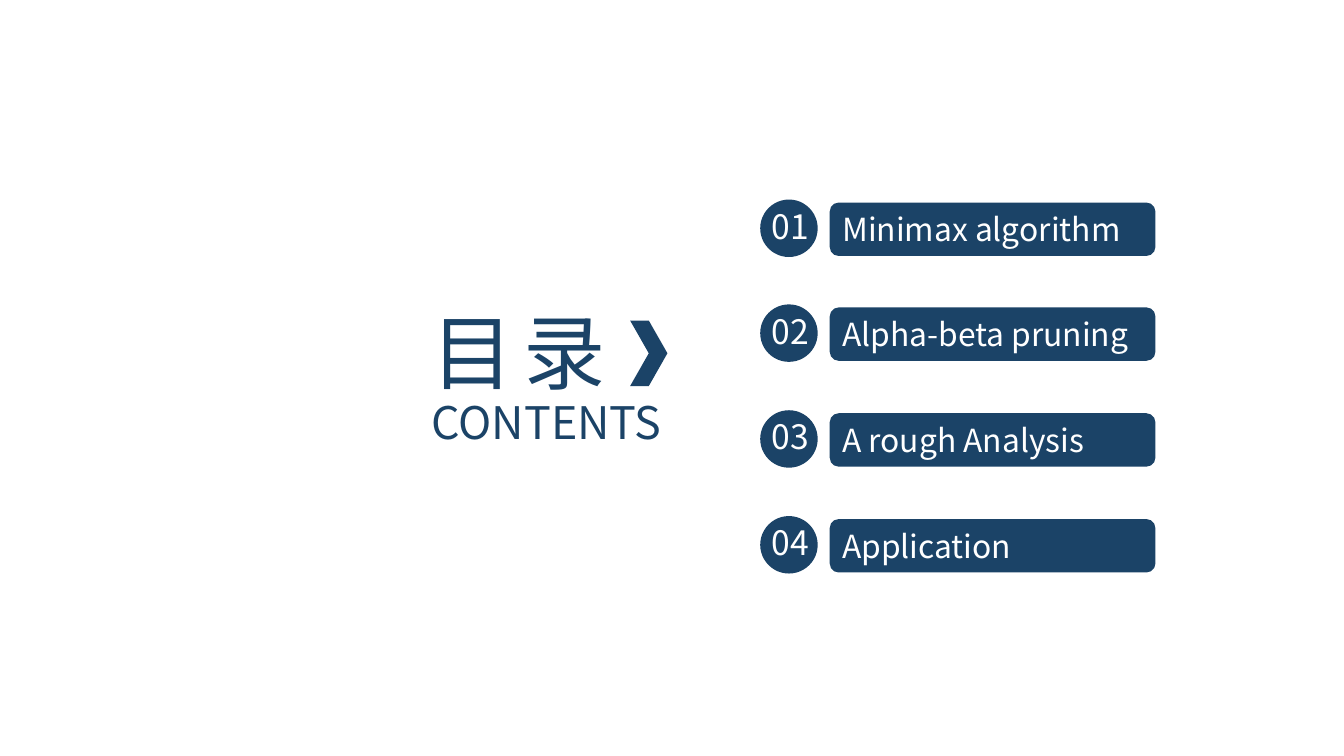
from dataclasses import dataclass

from lxml.etree import SubElement
from pptx import Presentation
from pptx.dml.color import RGBColor
from pptx.enum.shapes import MSO_SHAPE
from pptx.enum.text import MSO_ANCHOR, MSO_AUTO_SIZE, PP_ALIGN
from pptx.oxml.ns import qn
from pptx.util import Emu, Pt

PX = 9144  # EMU per px, 100 px to the inch
FONT = "Noto Sans CJK SC"
COLORS = {"navy": "1B4367", "white": "FFFFFF"}


@dataclass(frozen=True)
class Box:
    left: int
    top: int
    width: int
    height: int

    def emu(self) -> list[Emu]:
        return [Emu(v * PX) for v in (self.left, self.top, self.width, self.height)]


@dataclass(frozen=True)
class Entry:
    number: str
    label: str


ENTRIES = [
    Entry("01", "Minimax algorithm"),
    Entry("02", "Alpha-beta pruning"),
    Entry("03", "A rough Analysis"),
    Entry("04", "Application"),
]
FIRST_TOP, LAST_TOP = 201, 515


def add_filled(shapes, kind: MSO_SHAPE, box: Box):
    sp = shapes.add_shape(kind, *box.emu())
    sp.shadow.inherit = False
    sp.fill.solid()
    sp.fill.fore_color.rgb = RGBColor.from_string(COLORS["navy"])
    sp.line.fill.background()
    return sp


def set_text(sp, text: str, size: float, color: str,
             align: PP_ALIGN = PP_ALIGN.LEFT, spacing: int = 0) -> None:
    tf = sp.text_frame
    tf.word_wrap = True
    tf.auto_size = MSO_AUTO_SIZE.NONE
    tf.vertical_anchor = MSO_ANCHOR.MIDDLE
    p = tf.paragraphs[0]
    p.alignment = align
    r = p.add_run()
    r.text = text
    r.font.size = Pt(size)
    r.font.name = FONT
    r.font.color.rgb = RGBColor.from_string(COLORS[color])
    # East Asian font and letter spacing
    r_pr = r.font._element
    SubElement(r_pr, qn("a:ea")).set("typeface", FONT)
    if spacing:
        r_pr.set("spc", str(spacing))


def add_text(shapes, box: Box, text: str, size: float, color: str,
             align: PP_ALIGN = PP_ALIGN.LEFT) -> None:
    set_text(shapes.add_textbox(*box.emu()), text, size, color, align)


def add_entry(shapes, entry: Entry, top: int) -> None:
    bar = add_filled(shapes, MSO_SHAPE.ROUNDED_RECTANGLE, Box(823, top, 323, 53))
    set_text(bar, entry.label, 22.7, "white")
    badge = shapes.add_group_shape()
    add_filled(badge.shapes, MSO_SHAPE.OVAL, Box(754, top - 3, 57, 57))
    add_text(badge.shapes, Box(749, top - 2, 70, 50), entry.number, 24, "white",
             PP_ALIGN.CENTER)


def main() -> None:
    prs = Presentation()
    prs.slide_width, prs.slide_height = Emu(1333 * PX), Emu(750 * PX)
    s = prs.slides.add_slide(prs.slide_layouts[5])

    # Heading
    title = s.shapes.title
    title.left, title.top, title.width, title.height = Box(418, 293, 313, 109).emu()
    set_text(title, "目 录", 58.7, "navy", spacing=-300)
    add_text(s.shapes, Box(418, 386, 308, 64), "CONTENTS", 32, "navy")
    add_filled(s.shapes, MSO_SHAPE.CHEVRON, Box(625, 318, 37, 65))

    # Contents list
    for i, entry in enumerate(ENTRIES):
        top = FIRST_TOP + i * (LAST_TOP - FIRST_TOP) // (len(ENTRIES) - 1)
        add_entry(s.shapes, entry, top)

    prs.save("out.pptx")


if __name__ == "__main__":
    main()
